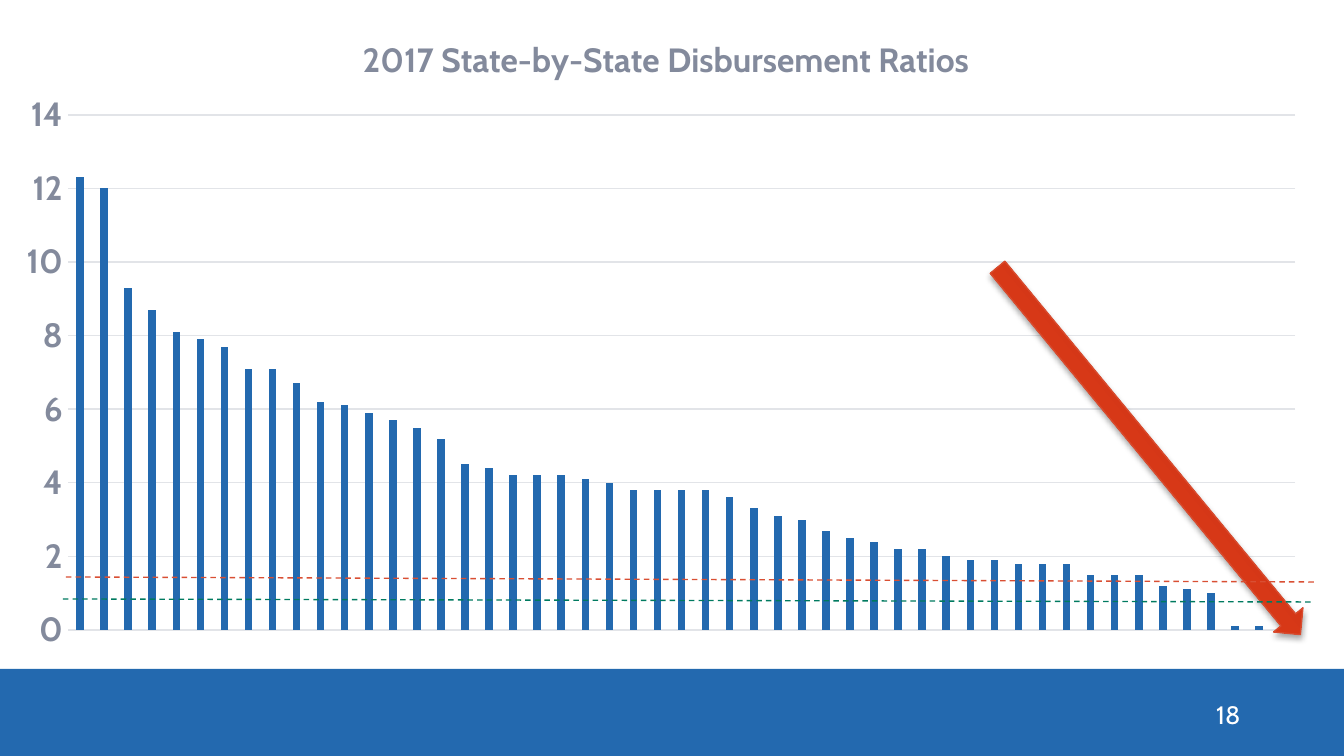
import lxml.etree
import pptx
import pptx.chart.data
import pptx.dml.color
import pptx.enum.chart
import pptx.enum.dml
import pptx.enum.shapes
import pptx.enum.text
import pptx.oxml
import pptx.oxml.ns
import pptx.util

EMU_PER_PX = 914400 / 134.4
WIDTH, HEIGHT = 1344, 756
FONT = "Cabin"
COLORS = {
    "blue": "2369AF", "white": "FFFFFF", "text": "4A4F5D", "label": "838A9C",
    "grid": "E2E4E8", "arrow_line": "D84B2E", "arrow_dark": "B52F13",
    "arrow_mid": "EA3D19", "arrow_light": "F03A15", "shadow": "000000",
    "red": "D94F33", "green": "007A60",
}
RATIOS = [
    12.3, 12, 9.3, 8.7, 8.1, 7.9, 7.7, 7.1, 7.1, 6.7, 6.2, 6.1, 5.9, 5.7, 5.5, 5.2, 4.5,
    4.4, 4.2, 4.2, 4.2, 4.1, 4, 3.8, 3.8, 3.8, 3.8, 3.6, 3.3, 3.1, 3, 2.7, 2.5, 2.4,
    2.2, 2.2, 2, 1.9, 1.9, 1.8, 1.8, 1.8, 1.5, 1.5, 1.5, 1.2, 1.1, 1, 0.1, 0.1, 0,
]


def px(value):
    return pptx.util.Emu(round(value * EMU_PER_PX))


def color(name):
    return pptx.dml.color.RGBColor.from_string(COLORS[name])


def set_font(font, size, color_name, bold=False):
    font.name = FONT
    font.size = pptx.util.Pt(size)
    font.bold = bold
    font.color.rgb = color(color_name)


def set_layout(parent, successor_names, fractions, inner=False):
    """Place a chart part by fractions of the chart's size."""
    for old in parent.findall(pptx.oxml.ns.qn("c:layout")):
        parent.remove(old)
    target = '<c:layoutTarget val="inner"/>' if inner else ""
    modes = '<c:xMode val="edge"/><c:yMode val="edge"/>'
    sizes = "".join(f'<c:{key} val="{value}"/>' for key, value in fractions.items())
    layout = pptx.oxml.parse_xml(
        f'<c:layout {pptx.oxml.ns.nsdecls("c")}><c:manualLayout>'
        f"{target}{modes}{sizes}</c:manualLayout></c:layout>")
    parent.insert_element_before(layout, *successor_names)


def add_footer(slide, left, top, width, height):
    band = slide.shapes.add_shape(pptx.enum.shapes.MSO_SHAPE.RECTANGLE,
                                  px(left), px(top), px(width), px(height))
    band.shadow.inherit = False
    band.fill.solid()
    band.fill.fore_color.rgb = color("blue")
    band.line.fill.background()

    # Slide number
    number = slide.shapes.add_textbox(px(left + 1203), px(top + 25), px(90), px(40))
    frame = number.text_frame
    frame.word_wrap = True
    frame.vertical_anchor = pptx.enum.text.MSO_ANCHOR.MIDDLE
    frame.text = "18"
    set_font(frame.paragraphs[0].font, 13.5, "white")


def add_ratio_chart(slide, left, top, width, height):
    data = pptx.chart.data.CategoryChartData(number_format="0.0")
    data.categories = [str(rank) for rank in range(1, len(RATIOS) + 1)]
    data.add_series("Series 1", RATIOS)
    chart = slide.shapes.add_chart(pptx.enum.chart.XL_CHART_TYPE.COLUMN_CLUSTERED,
                                   px(left), px(top), px(width), px(height), data).chart
    set_font(chart.font, 10, "text")
    chart.has_legend = False

    # Title
    chart.has_title = True
    title = chart.chart_title
    title.text_frame.text = "2017 State-by-State Disbursement Ratios"
    set_font(title.text_frame.paragraphs[0].font, 18, "label", bold=True)
    title.include_in_layout = False
    set_layout(title._element, ("c:overlay", "c:spPr", "c:txPr"), {"x": 0.27, "y": 0.045})

    # Columns
    plot = chart.plots[0]
    plot.gap_width = 219
    plot.overlap = -27
    plot.vary_by_categories = False
    fill = plot.series[0].format.fill
    fill.solid()
    fill.fore_color.rgb = color("blue")

    # Axes
    chart.category_axis.visible = False
    axis = chart.value_axis
    axis.minimum_scale, axis.maximum_scale, axis.major_unit = 0, 14, 2
    axis.major_tick_mark = pptx.enum.chart.XL_TICK_MARK.NONE
    axis.format.line.fill.background()
    axis.major_gridlines.format.line.color.rgb = color("grid")
    axis.major_gridlines.format.line.width = pptx.util.Pt(0.75)
    axis.tick_labels.number_format = "0"
    axis.tick_labels.number_format_is_linked = False
    set_font(axis.tick_labels.font, 18, "label", bold=True)

    plot_area = chart._chartSpace.chart.plotArea
    for old in plot_area.findall(pptx.oxml.ns.qn("c:layout")):
        plot_area.remove(old)
    set_layout(plot_area, ("c:barChart",),
               {"x": 0.0515, "y": 0.173, "w": 0.929, "h": 0.776}, inner=True)


def add_trend_arrow(slide, left, top, width, height):
    arrow = slide.shapes.add_shape(pptx.enum.shapes.MSO_SHAPE.RIGHT_ARROW,
                                   px(left), px(top), px(width), px(height))
    arrow.rotation = 50.5
    properties = arrow._element.spPr
    properties.xfrm.set("flipV", "1")
    arrow.line.color.rgb = color("arrow_line")
    arrow.line.width = pptx.util.Pt(0.75)

    # Three-stop gradient
    arrow.fill.gradient()
    gradient = properties.find(pptx.oxml.ns.qn("a:gradFill"))
    stops = ((0, "arrow_dark"), (80, "arrow_mid"), (100, "arrow_light"))
    stop_xml = "".join(f'<a:gs pos="{position * 1000}"><a:srgbClr val="{COLORS[name]}"/></a:gs>'
                       for position, name in stops)
    properties.replace(gradient, pptx.oxml.parse_xml(
        f'<a:gradFill {pptx.oxml.ns.nsdecls("a")} rotWithShape="1"><a:gsLst>{stop_xml}</a:gsLst>'
        '<a:lin ang="16200000" scaled="0"/></a:gradFill>'))

    # Soft shadow below
    arrow.shadow.inherit = False
    effects = properties.find(pptx.oxml.ns.qn("a:effectLst"))
    effects.append(pptx.oxml.parse_xml(
        f'<a:outerShdw {pptx.oxml.ns.nsdecls("a")} blurRad="{pptx.util.Pt(3.1)}" '
        f'dist="{pptx.util.Pt(1.8)}" dir="5400000" rotWithShape="0">'
        f'<a:srgbClr val="{COLORS["shadow"]}"><a:alpha val="35000"/></a:srgbClr></a:outerShdw>'))


def add_threshold(slide, left, top, width, height, color_name):
    line = slide.shapes.add_connector(pptx.enum.shapes.MSO_CONNECTOR.STRAIGHT, px(left), px(top),
                                      px(left + width), px(top + height))
    line.line.color.rgb = color(color_name)
    line.line.width = pptx.util.Pt(0.75)
    line.line.dash_style = pptx.enum.dml.MSO_LINE.DASH
    lxml.etree.SubElement(line._element.spPr, pptx.oxml.ns.qn("a:effectLst"))


def main():
    presentation = pptx.Presentation()
    presentation.slide_width, presentation.slide_height = px(WIDTH), px(HEIGHT)
    slide = presentation.slides.add_slide(presentation.slide_layouts.get_by_name("Blank"))
    add_footer(slide, 0, 669, WIDTH, 87)
    add_ratio_chart(slide, 0, 0, 1321, 664)
    add_trend_arrow(slide, 911, 432, 476, 38)
    add_threshold(slide, 66, 577, 1249, 5, "red")
    add_threshold(slide, 63, 599, 1251, 3, "green")
    presentation.save("out.pptx")


if __name__ == "__main__":
    main()
